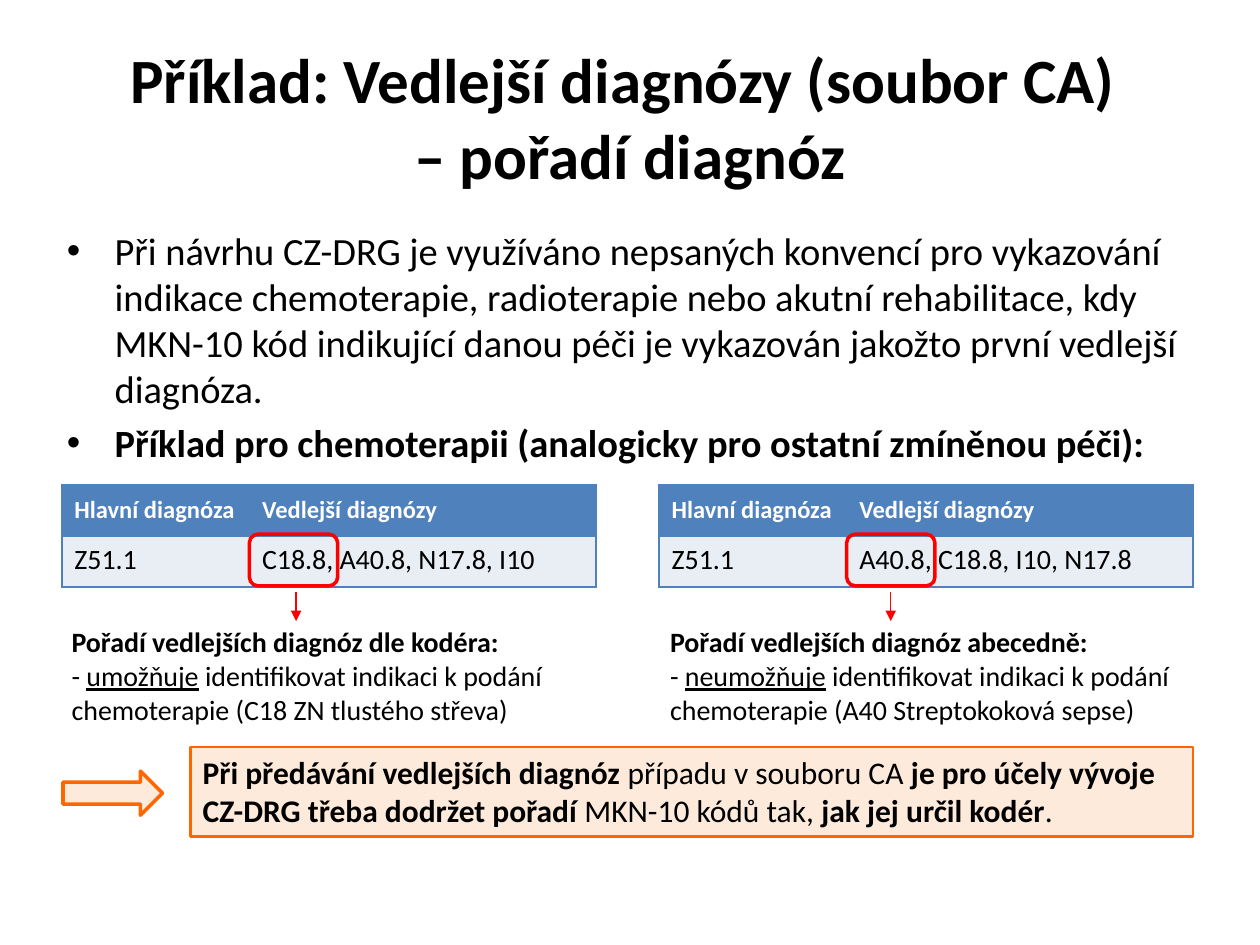
from dataclasses import dataclass

from lxml.etree import SubElement
from pptx import Presentation
from pptx.dml.color import RGBColor
from pptx.enum.shapes import MSO_CONNECTOR, MSO_SHAPE
from pptx.enum.text import MSO_ANCHOR, MSO_AUTO_SIZE, PP_ALIGN
from pptx.oxml.ns import qn
from pptx.util import Emu, Inches, Pt

FONT = "Calibri"
BLACK, WHITE, RED = "000000", "FFFFFF", "FF0000"
BLUE, PALE_BLUE = "4F81BD", "E9EDF4"
ORANGE, PALE_ORANGE = "FF6600", "FDEADA"
NO_TABLE_STYLE = "{2D5ABB26-0587-4C30-8999-92F81FD0307C}"

deck = Presentation()
deck.slide_width, deck.slide_height = Inches(10), Inches(7.5)


@dataclass
class Span:
    text: str
    bold: bool = False
    underline: bool = False


@dataclass
class Area:
    """A rectangle in hundredths of the slide's width and height."""
    left: float
    top: float
    width: float
    height: float

    def lengths(self) -> tuple:
        return col(self.left), row(self.top), col(self.width), row(self.height)


@dataclass
class Example:
    """One ordering of the diagnoses, with its table, mark and comment."""
    table_left: float
    mark_left: float
    arrow_x: float
    comment_left: float
    codes: str
    heading: str
    verb: str
    rest: str


def col(share: float) -> Emu:
    return Emu(round(deck.slide_width * share / 100))


def row(share: float) -> Emu:
    return Emu(round(deck.slide_height * share / 100))


def color(value: str) -> RGBColor:
    return RGBColor.from_string(value)


def write(para, spans: list[Span], size: float, text_color: str = BLACK) -> None:
    for span in spans:
        run = para.add_run()
        run.text = span.text
        font = run.font
        font.name, font.size, font.bold = FONT, Pt(size), span.bold
        font.underline = span.underline or None
        font.color.rgb = color(text_color)


def place(shape, area: Area) -> None:
    shape.left, shape.top, shape.width, shape.height = area.lengths()


def add_shape(kind, area: Area, line: str, weight: float, fill: str | None = None):
    shape = page.shapes.add_shape(kind, *area.lengths())
    shape.shadow.inherit = False
    if fill:
        shape.fill.solid()
        shape.fill.fore_color.rgb = color(fill)
    else:
        shape.fill.background()
    shape.line.color.rgb = color(line)
    shape.line.width = Pt(weight)
    return shape


def add_border(cell, side: str) -> None:
    line = SubElement(cell._tc.get_or_add_tcPr(), qn(f"a:ln{side}"), w=str(Pt(1)))
    fill = SubElement(line, qn("a:solidFill"))
    SubElement(fill, qn("a:srgbClr"), val=BLUE)


def add_diagnosis_table(area: Area, codes: str) -> None:
    table = page.shapes.add_table(2, 2, *area.lengths()).table
    table._tbl.tblPr.find(qn("a:tableStyleId")).text = NO_TABLE_STYLE
    for column, share in zip(table.columns, (14.9, 27.5)):
        column.width = col(share)
    rows = (("Hlavní diagnóza", "Vedlejší diagnózy"), ("Z51.1", codes))
    for r, texts in enumerate(rows):
        header = r == 0
        for c, text in enumerate(texts):
            cell = table.cell(r, c)
            for side in ("L" if c == 0 else "R", "T", "B"):
                add_border(cell, side)
            cell.fill.solid()
            cell.fill.fore_color.rgb = color(BLUE if header else PALE_BLUE)
            cell.vertical_anchor = MSO_ANCHOR.MIDDLE if header else MSO_ANCHOR.TOP
            write(cell.text_frame.paragraphs[0], [Span(text, header)],
                  14 if header else 16, WHITE if header else BLACK)


def add_down_arrow(x: float, top: float, bottom: float) -> None:
    arrow = page.shapes.add_connector(
        MSO_CONNECTOR.STRAIGHT, col(x), row(top), col(x), row(bottom))
    arrow.line.color.rgb = color(RED)
    arrow.line.width = Pt(0.75)
    SubElement(arrow.line._get_or_add_ln(), qn("a:tailEnd"), type="triangle")
    SubElement(arrow._element.spPr, qn("a:effectLst"))


def add_comment(area: Area, example: Example) -> None:
    frame = page.shapes.add_textbox(*area.lengths()).text_frame
    frame.word_wrap = True
    frame.auto_size = MSO_AUTO_SIZE.SHAPE_TO_FIT_TEXT
    write(frame.paragraphs[0], [Span(example.heading, bold=True)], 16)
    write(frame.add_paragraph(),
          [Span("- "), Span(example.verb, underline=True), Span(example.rest)], 16)


def add_bullet(para, span: Span, first: bool) -> None:
    properties = para._p.get_or_add_pPr()
    properties.set("marL", str(Inches(0.38)))
    properties.set("indent", str(-Inches(0.38)))
    if first:
        para.space_before = Pt(0)
    SubElement(properties, qn("a:buFont"), typeface="Arial")
    SubElement(properties, qn("a:buChar"), char="•")
    write(para, [span], 22)


page = deck.slides.add_slide(deck.slide_layouts[1])

# Title
title = page.shapes.title
place(title, Area(5, 4, 90, 16.67))
title.text_frame.vertical_anchor = MSO_ANCHOR.MIDDLE
heading = title.text_frame.paragraphs[0]
heading.alignment = PP_ALIGN.CENTER
write(heading, [Span("Příklad: Vedlejší diagnózy (soubor CA) ", bold=True)], 36)
heading.add_line_break()
write(heading, [Span("– pořadí diagnóz", bold=True)], 36)

# Bulleted introduction
body = page.placeholders[1]
place(body, Area(4.3, 23.33, 91.3, 66))
points = [
    Span("Při návrhu CZ-DRG je využíváno nepsaných konvencí pro vykazování indikace "
         "chemoterapie, radioterapie nebo akutní rehabilitace, kdy MKN-10 kód "
         "indikující danou péči je vykazován jakožto první vedlejší diagnóza."),
    Span("Příklad pro chemoterapii (analogicky pro ostatní zmíněnou péči):", bold=True),
]
for index, point in enumerate(points):
    frame = body.text_frame
    add_bullet(frame.add_paragraph() if index else frame.paragraphs[0], point, index == 0)

# The two orderings side by side
examples = [
    Example(4.9, 19.8, 23.5, 4.7, "C18.8, A40.8, N17.8, I10",
            "Pořadí vedlejších diagnóz dle kodéra:", "umožňuje",
            " identifikovat indikaci k podání chemoterapie (C18 ZN tlustého střeva)"),
    Example(52.3, 67.2, 70.7, 52.2, "A40.8, C18.8, I10, N17.8",
            "Pořadí vedlejších diagnóz abecedně:", "neumožňuje",
            " identifikovat indikaci k podání chemoterapie (A40 Streptokoková sepse)"),
]
for example in examples:
    add_diagnosis_table(Area(example.table_left, 51.33, 42.4, 10.8), example.codes)
    add_shape(MSO_SHAPE.ROUNDED_RECTANGLE, Area(example.mark_left, 56.53, 7, 5.47), RED, 2)
    add_comment(Area(example.comment_left, 65.47, 42.6, 15.73), example)
    add_down_arrow(example.arrow_x, 62.67, 65.73)

# Conclusion
add_shape(MSO_SHAPE.RIGHT_ARROW, Area(5, 81.6, 7.9, 4.67), ORANGE, 2, PALE_ORANGE)
conclusion = add_shape(
    MSO_SHAPE.RECTANGLE, Area(15.1, 79.07, 79.6, 9.47), ORANGE, 1.5, PALE_ORANGE)
frame = conclusion.text_frame
frame.word_wrap = True
frame.auto_size = MSO_AUTO_SIZE.SHAPE_TO_FIT_TEXT
frame.vertical_anchor = MSO_ANCHOR.TOP
frame.paragraphs[0].alignment = PP_ALIGN.LEFT
write(frame.paragraphs[0], [
    Span("Při předávání vedlejších diagnóz ", bold=True),
    Span("případu v souboru CA "),
    Span("je pro účely vývoje CZ-DRG třeba dodržet pořadí", bold=True),
    Span(" MKN-10 kódů tak, "),
    Span("jak jej určil kodér", bold=True),
    Span("."),
], 18)

deck.save("out.pptx")
